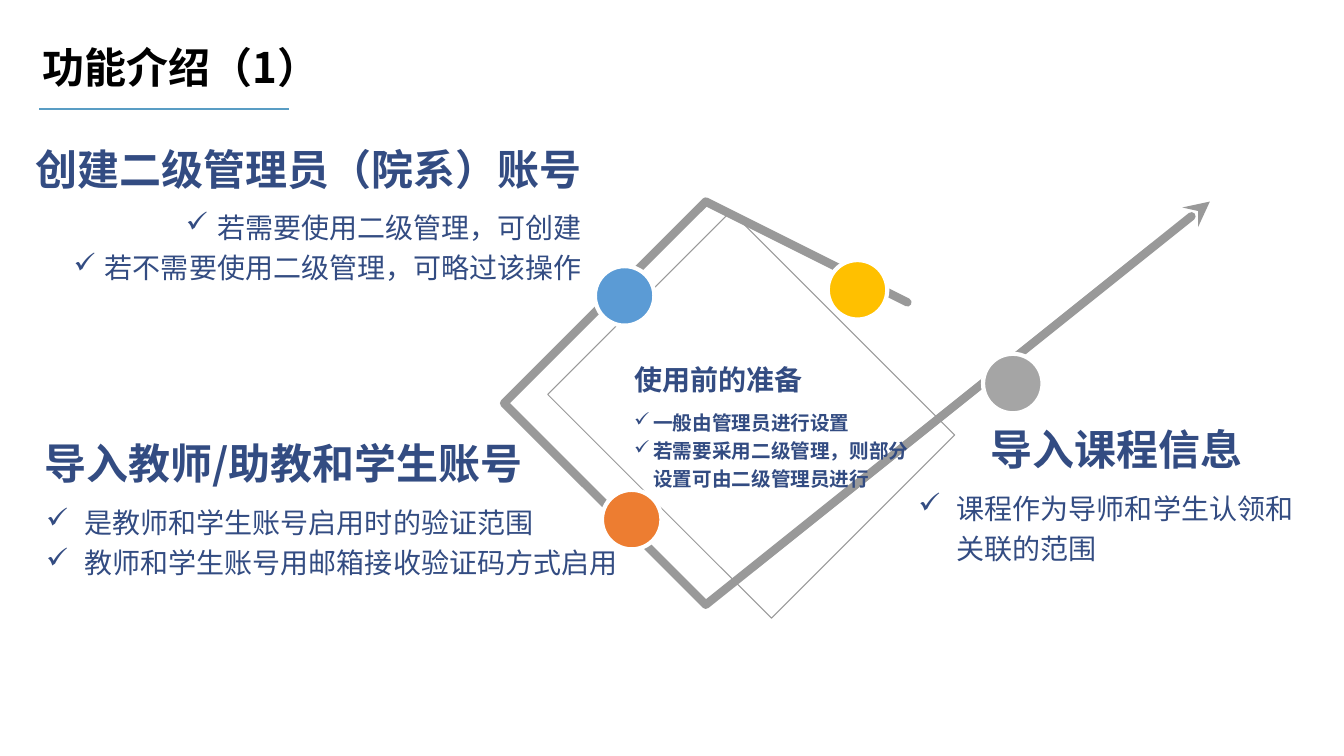
"""Build the slide that introduces the preparation features."""
from dataclasses import dataclass

import lxml.etree
import pptx
import pptx.dml.color
import pptx.enum.shapes
import pptx.enum.text
import pptx.oxml.ns
import pptx.util

Inches = pptx.util.Inches
Pt = pptx.util.Pt
ALIGN = pptx.enum.text.PP_ALIGN
ANCHOR = pptx.enum.text.MSO_ANCHOR
SHAPE = pptx.enum.shapes.MSO_SHAPE


@dataclass(frozen=True)
class Theme:
    font: str = "Noto Sans CJK SC"
    white: str = "FFFFFF"
    black: str = "000000"
    navy: str = "334C82"
    gray: str = "999999"
    rule: str = "599DC4"
    heading: int = 30
    body: int = 20
    small: int = 14


THEME = Theme()
TITLE = "功能介绍（1）"
SECTIONS = [
    dict(heading="使用前的准备", heading_at=(6.19, 3.61, 2.99, 0.37), heading_size=THEME.body,
         heading_align=ALIGN.LEFT,
         points=["一般由管理员进行设置", "若需要采用二级管理，则部分设置可由二级管理员进行"],
         points_at=(6.19, 3.98, 2.99, 0.84), points_size=THEME.small, points_bold=True,
         points_align=ALIGN.LEFT, indent=0.19),
    dict(heading="导入教师/助教和学生账号", heading_at=(0.32, 4.21, 4.96, 0.68),
         heading_size=THEME.heading, heading_align=ALIGN.RIGHT,
         points=["是教师和学生账号启用时的验证范围", "教师和学生账号用邮箱接收验证码方式启用"],
         points_at=(0.36, 4.9, 6, 1.55), points_size=THEME.body, points_bold=False,
         points_align=ALIGN.LEFT, indent=0.38),
    dict(heading="导入课程信息", heading_at=(9.73, 4.1, 3.11, 0.65),
         heading_size=THEME.heading, heading_align=ALIGN.LEFT,
         points=["课程作为导师和学生认领和关联的范围"],
         points_at=(9.01, 4.76, 4.15, 2.59), points_size=THEME.body, points_bold=False,
         points_align=ALIGN.LEFT, indent=0.38),
    dict(heading="创建二级管理员（院系）账号", heading_at=(0.32, 1.46, 5.55, 0.51),
         heading_size=THEME.heading, heading_align=ALIGN.RIGHT,
         points=["若需要使用二级管理，可创建", "若不需要使用二级管理，可略过该操作"],
         points_at=(0.32, 1.97, 5.55, 1.38), points_size=THEME.body, points_bold=False,
         points_align=ALIGN.RIGHT, indent=0.31),
]
ROUTE = [(8.56, 2.94), (7.36, 1.76), (5.12, 4), (7.49, 6.37), (12.05, 1.81)]
STOP_SIZE = 0.59
STOPS = [(8.21, 2.58, "FFC000"), (5.9, 2.64, "5B9BD5"),
         (5.97, 4.86, "ED7D31"), (9.75, 3.51, "A5A5A5")]


def rgb(color):
    return pptx.dml.color.RGBColor.from_string(color)


def add_xml(parent, tag, **attributes):
    lxml.etree.SubElement(parent, pptx.oxml.ns.qn(tag), attributes)


def set_line(item, color, width):
    item.line.color.rgb = rgb(color)
    item.line.width = Pt(width)


def write(holder, lines, size, color, bold, align, anchor, wrap=True, indent=None):
    frame = holder.text_frame
    frame.text = "\n".join(lines)
    frame.auto_size = pptx.enum.text.MSO_AUTO_SIZE.NONE
    frame.word_wrap = wrap
    frame.vertical_anchor = anchor
    for paragraph in frame.paragraphs:
        paragraph.alignment = align
        if indent:
            properties = paragraph._p.get_or_add_pPr()
            properties.set("marL", str(Inches(indent)))
            properties.set("indent", str(-Inches(indent)))
            add_xml(properties, "a:buChar", char="✓")
            paragraph.line_spacing = 1.2
        for run in paragraph.runs:
            run.font.size = Pt(size)
            run.font.bold = bold
            run.font.color.rgb = rgb(color)
            run.font.name = THEME.font
            add_xml(run._r.get_or_add_rPr(), "a:ea", typeface=THEME.font)


def add_title(slide):
    title = slide.shapes.title
    title.left, title.top, title.width, title.height = map(Inches, (0.32, 0.36, 4.72, 0.61))
    write(title, [TITLE], THEME.heading, THEME.black, True, ALIGN.LEFT, ANCHOR.TOP)
    underline = slide.shapes.add_connector(
        pptx.enum.shapes.MSO_CONNECTOR.STRAIGHT, *map(Inches, (0.39, 1.08, 2.87, 1.08)))
    set_line(underline, THEME.rule, 1)
    add_xml(underline._element.spPr, "a:effectLst")


def add_route(slide):
    diamond = slide.shapes.add_shape(SHAPE.RECTANGLE, *map(Inches, (5.88, 2.83, 3.14, 2.57)))
    diamond.rotation = 45
    builder = slide.shapes.build_freeform(*ROUTE[0], scale=Inches(1))
    builder.add_line_segments(ROUTE[1:], close=False)
    route = builder.convert_to_shape()
    for outline, width in ((diamond, 0.75), (route, 6)):
        outline.shadow.inherit = False
        outline.fill.background()
        set_line(outline, THEME.gray, width)
    stroke = route._element.spPr.find(pptx.oxml.ns.qn("a:ln"))
    stroke.set("cap", "rnd")
    add_xml(stroke, "a:round")
    add_xml(stroke, "a:tailEnd", type="stealth")


def add_section(slide, section):
    points = slide.shapes.add_textbox(*map(Inches, section["points_at"]))
    write(points, section["points"], section["points_size"], THEME.navy, section["points_bold"],
          section["points_align"], ANCHOR.TOP, indent=section["indent"])
    heading = slide.shapes.add_textbox(*map(Inches, section["heading_at"]))
    write(heading, [section["heading"]], section["heading_size"], THEME.navy, True,
          section["heading_align"], ANCHOR.BOTTOM, wrap=False)


def add_stop(slide, left, top, color):
    stop = slide.shapes.add_shape(
        SHAPE.OVAL, *map(Inches, (left, top, STOP_SIZE, STOP_SIZE)))
    stop.shadow.inherit = False
    stop.fill.solid()
    stop.fill.fore_color.rgb = rgb(color)
    set_line(stop, THEME.white, 3)


def main():
    deck = pptx.Presentation()
    deck.slide_width, deck.slide_height = Inches(13.33), Inches(7.5)
    slide = deck.slides.add_slide(deck.slide_layouts[5])
    slide.background.fill.solid()
    slide.background.fill.fore_color.rgb = rgb(THEME.white)
    add_title(slide)
    add_route(slide)
    for section in SECTIONS:
        add_section(slide, section)
    for stop in STOPS:
        add_stop(slide, *stop)
    deck.save("out.pptx")


if __name__ == "__main__":
    main()
